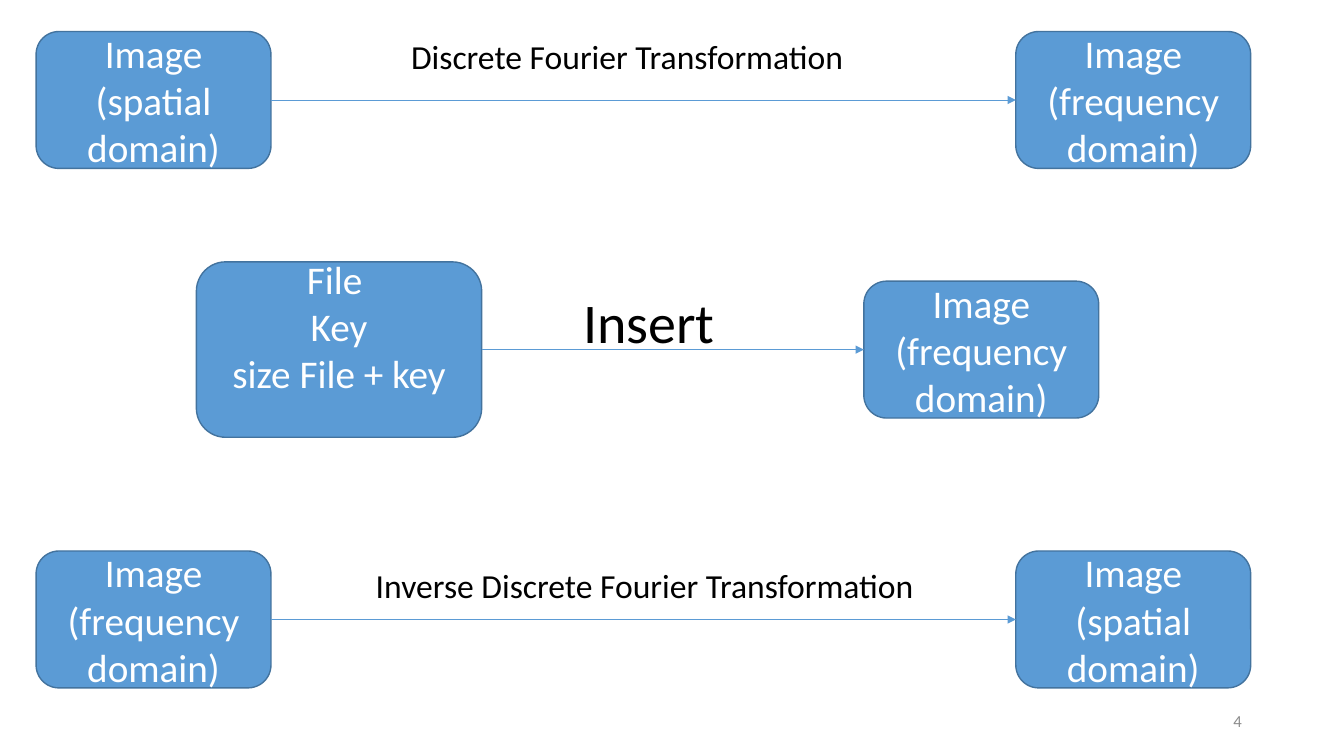
from lxml.etree import SubElement
from pptx import Presentation
from pptx.dml.color import RGBColor
from pptx.enum.shapes import MSO_CONNECTOR as CONN, MSO_SHAPE as SHAPE
from pptx.enum.text import MSO_ANCHOR as ANCHOR, PP_ALIGN as ALIGN
from pptx.oxml.ns import qn
from pptx.util import Cm, Pt


def rgb(color):
    return RGBColor.from_string(color)


def write(sp, text, size=28, color="FFFFFF", align=ALIGN.CENTER,
          anchor=ANCHOR.MIDDLE, bottom=0.13):
    """Fill a shape with text, one paragraph per line; bottom inset in cm."""
    tf = sp.text_frame
    tf.word_wrap = True
    tf.vertical_anchor = anchor
    tf.margin_bottom = Cm(bottom)
    tf.text = text
    for p in tf.paragraphs:
        p.alignment = align
        p.font.name = "Calibri"
        p.font.size = Pt(size)
        p.font.color.rgb = rgb(color)


prs = Presentation()
prs.slide_width, prs.slide_height = Cm(33.87), Cm(19.05)
slide = prs.slides.add_slide(prs.slide_layouts[6])
shapes = slide.shapes

SPATIAL = "Image\n(spatial domain)"
FREQUENCY = "Image\n(frequency domain)"
PAYLOAD = "File \nKey\nsize File + key"
IMAGE_SIZE = (5.92, 3.45)
PAYLOAD_SIZE = (7.19, 4.42)

# Middle height, then source and target as (text, left, size, bottom inset),
# then label as (text, left, top, width, height, font size)
steps = [
    (2.52, (SPATIAL, 0.91, IMAGE_SIZE, 0.13), (FREQUENCY, 25.6, IMAGE_SIZE, 0.13),
     ("Discrete Fourier Transformation", 10.11, 0.79, 13.31, 1.27, 24)),
    (8.81, (PAYLOAD, 4.95, PAYLOAD_SIZE, 1.33), (FREQUENCY, 21.77, IMAGE_SIZE, 0.13),
     ("Insert", 14.45, 7.11, 8.13, 1.96, 40)),
    (15.61, (FREQUENCY, 0.91, IMAGE_SIZE, 0.13), (SPATIAL, 25.6, IMAGE_SIZE, 0.13),
     ("Inverse Discrete Fourier Transformation", 9.22, 14.12, 15.49, 1.27, 24)),
]

for middle, source, target, label in steps:
    boxes = []
    for text, left, (width, height), bottom in (source, target):
        sp = shapes.add_shape(SHAPE.ROUNDED_RECTANGLE, Cm(left),
                              Cm(middle - height / 2), Cm(width), Cm(height))
        sp.shadow.inherit = False
        sp.fill.solid()
        sp.fill.fore_color.rgb = rgb("5B9BD5")
        sp.line.color.rgb = rgb("43739E")
        sp.line.width = Pt(1)
        write(sp, text, bottom=bottom)
        boxes.append(sp)

    arrow = shapes.add_connector(CONN.STRAIGHT, 0, 0, 0, 0)
    arrow.begin_connect(boxes[0], 3)
    arrow.end_connect(boxes[1], 1)
    arrow.line.color.rgb = rgb("5B9BD5")
    arrow.line.width = Pt(0.5)
    SubElement(arrow.line._get_or_add_ln(), qn("a:tailEnd"), type="triangle")
    SubElement(arrow._element.spPr, qn("a:effectLst"))

    text, *place, size = label
    sp = shapes.add_textbox(*map(Cm, place))
    write(sp, text, size=size, color="000000", align=ALIGN.LEFT, anchor=ANCHOR.TOP)

page_number = shapes.add_textbox(Cm(23.93), Cm(17.65), Cm(7.62), Cm(1.02))
write(page_number, "4", size=12, color="8C8C8C", align=ALIGN.RIGHT)

prs.save("out.pptx")
